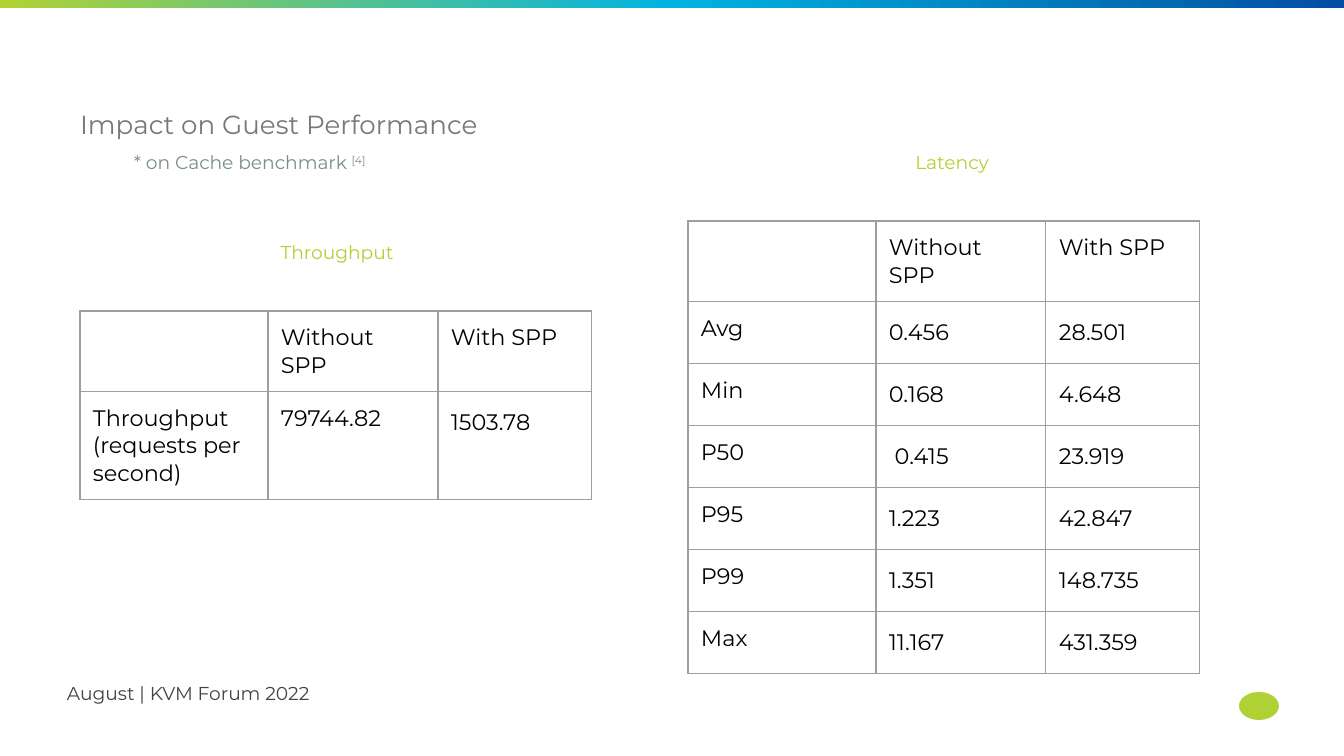
"""Build the guest performance slide with throughput and latency tables."""
import pptx
import pptx.dml.color
import pptx.enum.shapes
import pptx.enum.text
import pptx.oxml
import pptx.oxml.ns
import pptx.util
from dataclasses import dataclass

ALIGN = pptx.enum.text.PP_ALIGN
SHAPES = pptx.enum.shapes.MSO_SHAPE


@dataclass(frozen=True)
class Theme:
    font: str = "Montserrat"
    heading: str = "76787A"
    note: str = "7B9082"
    accent: str = "AFD135"
    footer: str = "434343"
    cell: str = "000000"
    border: str = "9E9E9E"
    bar: tuple = ("B0D235", "02B3E2", "034EA2")
    heading_size: int = 14
    small_size: int = 10
    cell_size: int = 12
    border_width: float = 0.75


THEME = Theme()
WIDTH, HEIGHT = 1344, 756
INSET = 13
COLUMNS = (188, 170, 154)
ROW_HEIGHT = 62
BODY_SPACING = 1.15

HEADING = {"box": (67, 95, 621, 59), "runs": ["Impact on Guest Performance"],
           "size": THEME.heading_size, "color": THEME.heading,
           "inset": INSET, "format": {"space_before": pptx.util.Pt(12)}}
FOOTER = {"box": (67, 677, 1171, 48), "runs": ["August | KVM Forum 2022"],
          "size": THEME.small_size, "color": THEME.footer,
          "format": {"space_before": pptx.util.Pt(9), "line_spacing": 1.2}}
LABELS = [
    {"box": (109, 241, 456, 67), "runs": ["Throughput"],
     "size": THEME.small_size, "color": THEME.accent,
     "format": {"alignment": ALIGN.CENTER, "space_before": pptx.util.Pt(12)}},
    {"box": (724, 151, 456, 67), "runs": ["Latency"],
     "size": THEME.small_size, "color": THEME.accent,
     "format": {"alignment": ALIGN.CENTER, "space_before": pptx.util.Pt(12)}},
    {"box": (67, 151, 456, 67), "runs": ["* on Cache benchmark ", "[4]"],
     "size": THEME.small_size, "color": THEME.note, "indent": 67,
     "format": {"space_before": pptx.util.Pt(12)}},
]
HEADER = ("", "Without SPP", "With SPP")
TABLES = [
    {"at": (80, 311), "first_spaced_column": 2, "rows": [
        HEADER,
        ("Throughput (requests per second)", "79744.82", "1503.78"),
    ]},
    {"at": (688, 221), "first_spaced_column": 1, "rows": [
        HEADER,
        ("Avg", "0.456", "28.501"),
        ("Min", "0.168", "4.648"),
        ("P50", " 0.415", "23.919"),
        ("P95", "1.223", "42.847"),
        ("P99", "1.351", "148.735"),
        ("Max", "11.167", "431.359"),
    ]},
]
BAR = (0, 0, WIDTH, 8)
EMBLEM = (1239, 692, 40, 28)


def px(value):
    return pptx.util.Emu(round(value * 914400 / 134.4))


def set_values(target, values):
    for name, value in values.items():
        setattr(target, name, value)


def place(shape, box):
    set_values(shape, dict(zip(("left", "top", "width", "height"), map(px, box))))


def margins(inset):
    return {f"margin_{side}": px(inset) for side in ("left", "right", "top", "bottom")}


def add_run(paragraph, text, size, color):
    run = paragraph.add_run()
    run.text = text
    set_values(run.font, {"name": THEME.font, "size": pptx.util.Pt(size), "bold": False})
    run.font.color.rgb = pptx.dml.color.RGBColor.from_string(color)
    return run


def write_text(shape, item):
    place(shape, item["box"])
    frame = shape.text_frame
    set_values(frame, {"word_wrap": True,
                       "auto_size": pptx.enum.text.MSO_AUTO_SIZE.NONE,
                       "vertical_anchor": pptx.enum.text.MSO_ANCHOR.TOP,
                       **margins(item.get("inset", 0))})
    paragraph = frame.paragraphs[0]
    set_values(paragraph, {"alignment": ALIGN.LEFT, **item["format"]})
    if "indent" in item:
        properties = paragraph._p.get_or_add_pPr()
        properties.set("marL", str(px(item["indent"])))
        properties.set("indent", "0")
    runs = [add_run(paragraph, text, item["size"], item["color"]) for text in item["runs"]]
    for superscript in runs[1:]:
        superscript.font._element.set("baseline", "30000")


def border_cell(cell):
    properties = cell._tc.get_or_add_tcPr()
    width = pptx.util.Pt(THEME.border_width)
    for index, side in enumerate(("lnL", "lnR", "lnT", "lnB")):
        properties.insert(index, pptx.oxml.parse_xml(
            f'<a:{side} {pptx.oxml.ns.nsdecls("a")} w="{width}"><a:solidFill>'
            f'<a:srgbClr val="{THEME.border}"/></a:solidFill></a:{side}>'))


def add_table(slide, item):
    rows = item["rows"]
    box = (*item["at"], sum(COLUMNS), ROW_HEIGHT * len(rows))
    table = slide.shapes.add_table(len(rows), len(COLUMNS), *map(px, box)).table
    set_values(table, {"first_row": False, "horz_banding": False})
    for column, width in zip(table.columns, COLUMNS):
        column.width = px(width)
    for row_index, texts in enumerate(rows):
        table.rows[row_index].height = px(ROW_HEIGHT)
        for column_index, text in enumerate(texts):
            cell = table.cell(row_index, column_index)
            set_values(cell, margins(INSET))
            cell.fill.background()
            border_cell(cell)
            paragraph = cell.text_frame.paragraphs[0]
            if row_index and column_index >= item["first_spaced_column"]:
                paragraph.line_spacing = BODY_SPACING
            if text:
                add_run(paragraph, text, THEME.cell_size, THEME.cell)


def add_plain_shape(slide, kind, box):
    shape = slide.shapes.add_shape(kind, *map(px, box))
    shape.line.fill.background()
    shape.shadow.inherit = False
    return shape


def add_bar(slide):
    bar = add_plain_shape(slide, SHAPES.RECTANGLE, BAR)
    step = 100000 // (len(THEME.bar) - 1)
    stops = "".join(f'<a:gs pos="{index * step}"><a:srgbClr val="{color}"/></a:gs>'
                    for index, color in enumerate(THEME.bar))
    bar._element.spPr.insert(2, pptx.oxml.parse_xml(
        f'<a:gradFill {pptx.oxml.ns.nsdecls("a")} rotWithShape="1">'
        f'<a:gsLst>{stops}</a:gsLst><a:lin ang="0" scaled="0"/></a:gradFill>'))


def add_emblem(slide):
    emblem = add_plain_shape(slide, SHAPES.OVAL, EMBLEM)
    emblem.fill.solid()
    emblem.fill.fore_color.rgb = pptx.dml.color.RGBColor.from_string(THEME.accent)


def main():
    presentation = pptx.Presentation()
    set_values(presentation, {"slide_width": px(WIDTH), "slide_height": px(HEIGHT)})
    slide = presentation.slides.add_slide(presentation.slide_layouts[0])
    add_bar(slide)
    add_emblem(slide)
    write_text(slide.shapes.title, HEADING)
    write_text(slide.placeholders[1], FOOTER)
    for item in TABLES:
        add_table(slide, item)
    for item in LABELS:
        write_text(slide.shapes.add_textbox(*map(px, item["box"])), item)
    presentation.save("out.pptx")


if __name__ == "__main__":
    main()
